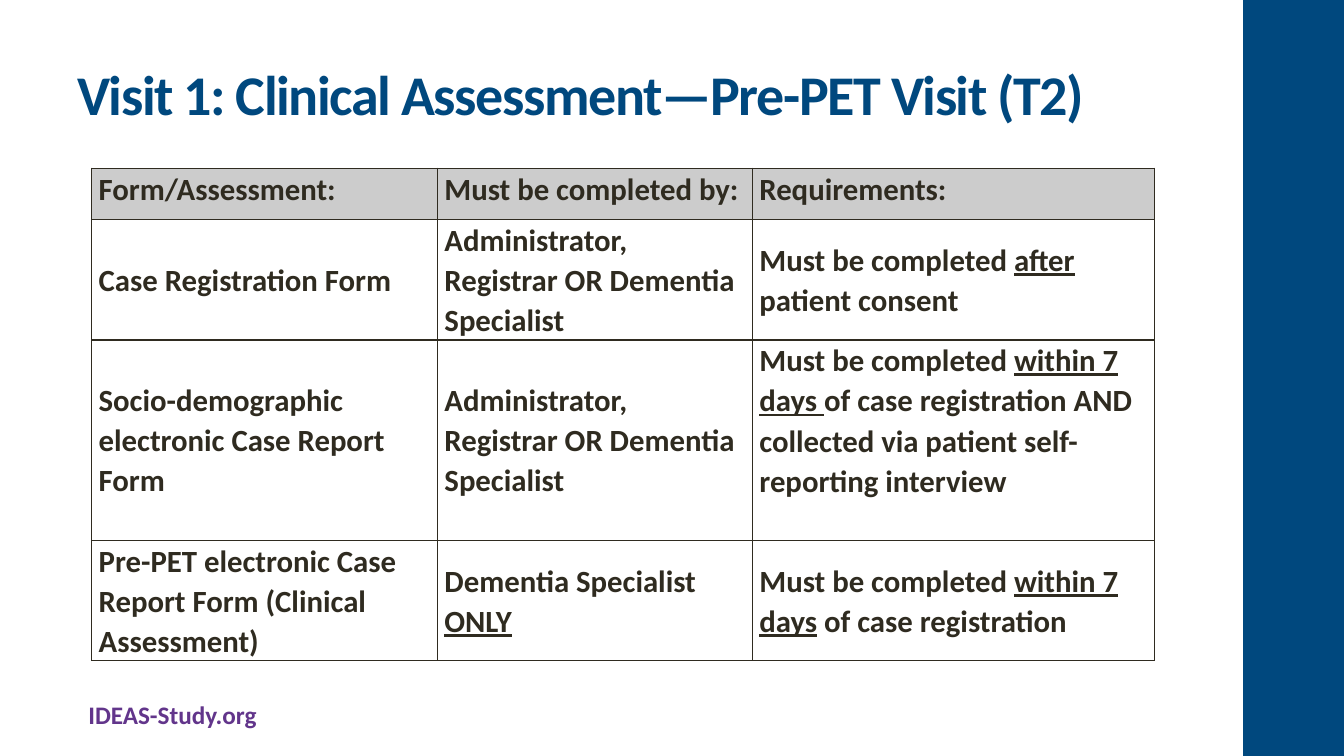
from lxml import etree
from pptx import Presentation
from pptx.dml.color import RGBColor
from pptx.enum import shapes, text
from pptx.oxml import ns
from pptx.util import Pt

NAVY = RGBColor(0x00, 0x48, 0x7E)
PURPLE = RGBColor(0x62, 0x35, 0x8B)
INK = RGBColor(0x2F, 0x2B, 0x20)
HEADER_GRAY = RGBColor(0xCC, 0xCC, 0xCC)

SLIDE_WIDTH, SLIDE_HEIGHT = 960, 540
BAND_WIDTH = 72
COLUMN_WIDTHS = [247, 225, 287]
ROW_HEIGHTS = [36.7, 86, 143, 86]
INTERVIEW_CELL = (2, 2)
INTERVIEW_BOTTOM = 28.7

# Text between bars is underlined.
STAFF = "Administrator, Registrar OR Dementia Specialist"
ROWS = [
    ["Form/Assessment:", "Must be completed by:", "Requirements:"],
    ["Case Registration Form", STAFF,
     "Must be completed |after| patient consent"],
    ["Socio-demographic electronic Case Report Form", STAFF,
     "Must be completed |within 7 days |of case registration AND "
     "collected via patient self-reporting interview"],
    ["Pre-PET electronic Case Report Form (Clinical Assessment)",
     "Dementia Specialist |ONLY|",
     "Must be completed |within 7 days| of case registration"],
]


def style_font(paragraph, size, color):
    font = paragraph.font
    font.name = "Calibri"
    font.size = Pt(size)
    font.bold = True
    font.color.rgb = color


def add_label(slide, words, box, size, color, wrap):
    frame = slide.shapes.add_textbox(*map(Pt, box)).text_frame
    frame.word_wrap = wrap
    frame.vertical_anchor = text.MSO_ANCHOR.MIDDLE
    paragraph = frame.paragraphs[0]
    paragraph.text = words
    style_font(paragraph, size, color)
    return paragraph


def add_title(slide, words):
    title = add_label(slide, words, (48, 21.6, 800, 90), 40, NAVY, True)
    title.runs[0].font._element.set("spc", "-100")


def add_side_band(slide):
    band = slide.shapes.add_shape(
        shapes.MSO_SHAPE.RECTANGLE, Pt(SLIDE_WIDTH - BAND_WIDTH), 0,
        Pt(BAND_WIDTH), Pt(SLIDE_HEIGHT))
    band.shadow.inherit = False
    band.fill.solid()
    band.fill.fore_color.rgb = NAVY
    band.line.fill.background()


def add_borders(cell):
    properties = cell._tc.get_or_add_tcPr()
    for side in ("a:lnL", "a:lnR", "a:lnT", "a:lnB"):
        line = etree.SubElement(properties, ns.qn(side), w=str(Pt(1)))
        fill = etree.SubElement(line, ns.qn("a:solidFill"))
        etree.SubElement(fill, ns.qn("a:srgbClr"), val=str(INK))


def fill_cell(cell, words, is_header):
    """Write the words, underlining the parts between bars, and style the cell."""
    cell.margin_left = cell.margin_right = Pt(5)
    cell.margin_top = cell.margin_bottom = 0
    cell.vertical_anchor = (
        text.MSO_ANCHOR.TOP if is_header else text.MSO_ANCHOR.MIDDLE)
    add_borders(cell)
    if is_header:
        cell.fill.solid()
        cell.fill.fore_color.rgb = HEADER_GRAY
    else:
        cell.fill.background()
    paragraph = cell.text_frame.paragraphs[0]
    paragraph.line_spacing = 1.07
    style_font(paragraph, 22, INK)
    for index, part in enumerate(words.split("|")):
        if part:
            run = paragraph.add_run()
            run.text = part
            if index % 2:
                run.font.underline = True


def add_requirements_table(slide):
    table = slide.shapes.add_table(
        len(ROW_HEIGHTS), len(COLUMN_WIDTHS), Pt(65.5), Pt(120.2),
        Pt(sum(COLUMN_WIDTHS)), Pt(sum(ROW_HEIGHTS))).table
    table.first_row = table.horz_banding = False
    for column, width in zip(table.columns, COLUMN_WIDTHS):
        column.width = Pt(width)
    for r, (height, row) in enumerate(zip(ROW_HEIGHTS, ROWS)):
        table.rows[r].height = Pt(height)
        for c, words in enumerate(row):
            fill_cell(table.cell(r, c), words, r == 0)
    table.cell(*INTERVIEW_CELL).margin_bottom = Pt(INTERVIEW_BOTTOM)


def main():
    deck = Presentation()
    deck.slide_width, deck.slide_height = Pt(SLIDE_WIDTH), Pt(SLIDE_HEIGHT)
    slide = deck.slides.add_slide(deck.slide_layouts[6])
    add_side_band(slide)
    add_label(slide, "IDEAS-Study.org", (56, 495.5, 135, 29), 18, PURPLE, False)
    add_title(slide, "Visit 1: Clinical Assessment—Pre-PET Visit (T2)")
    add_requirements_table(slide)
    deck.save("out.pptx")


if __name__ == "__main__":
    main()
